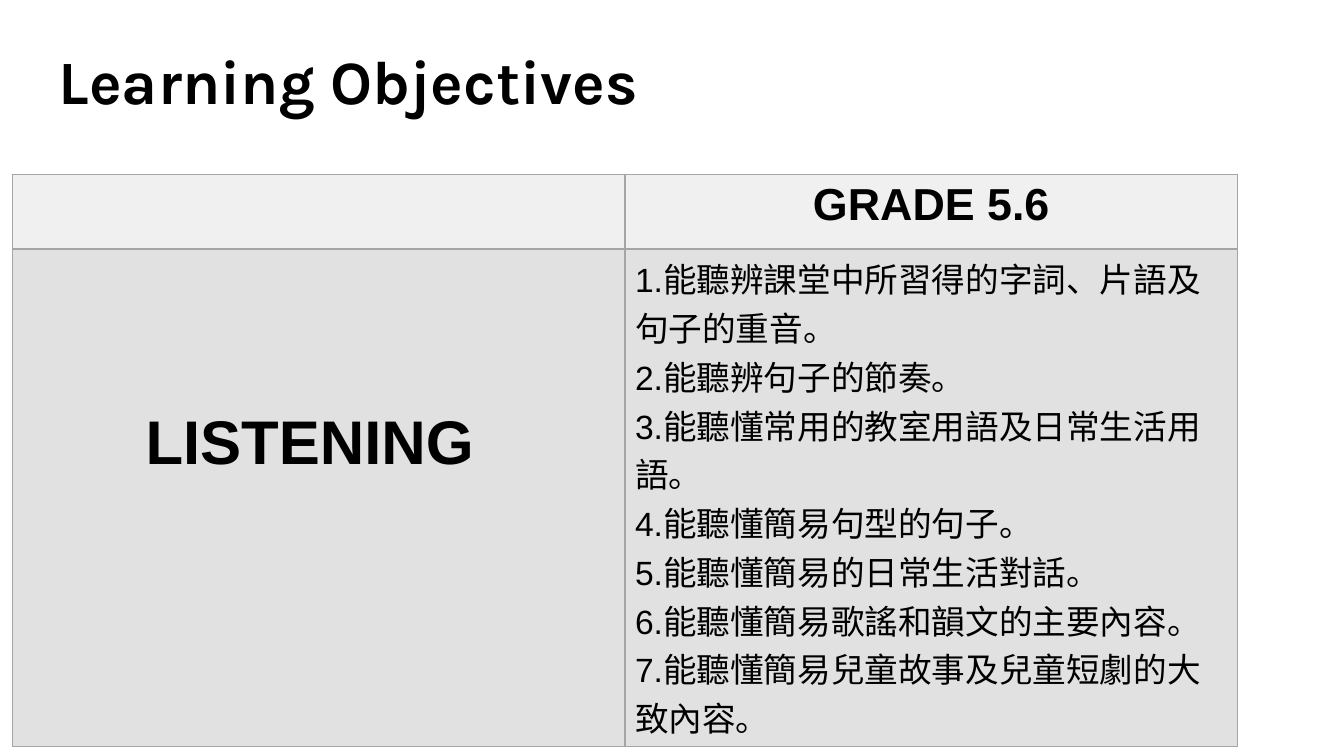
from itertools import product

from lxml.etree import SubElement
from pptx import Presentation
from pptx.dml.color import RGBColor
from pptx.enum.text import MSO_ANCHOR, PP_ALIGN
from pptx.oxml.ns import qn
from pptx.util import Pt

TITLE = " Learning Objectives"
GRADE = ["GRADE 5.6"]
SKILL = ["LISTENING "]
OBJECTIVES = [
    "1.能聽辨課堂中所習得的字詞、片語及句子的重音。",
    "2.能聽辨句子的節奏。",
    "3.能聽懂常用的教室用語及日常生活用語。",
    "4.能聽懂簡易句型的句子。",
    "5.能聽懂簡易的日常生活對話。",
    "6.能聽懂簡易歌謠和韻文的主要內容。",
    "7.能聽懂簡易兒童故事及兒童短劇的大致內容。",
]

BLACK = RGBColor(0x00, 0x00, 0x00)
HEADER_GREY = RGBColor(0xF0, 0xF0, 0xF0)
BODY_GREY = RGBColor(0xE1, 0xE1, 0xE1)
BORDER_GREY = RGBColor(0xA5, 0xA5, 0xA5)

TITLE_FONT = {"name": "Karla", "size": Pt(44), "bold": True}
GRADE_FONT = {"name": "Arial", "size": Pt(32), "bold": True}
SKILL_FONT = {"name": "Arial", "size": Pt(44), "bold": True}
OBJECTIVE_FONT = {"name": "Arial", "size": Pt(24), "bold": False}

COLUMN_WIDTH = 437.76
ROW_HEIGHTS = [53.28, 327.6]
ROW_FILLS = [HEADER_GREY, BODY_GREY]
SKILL_TOP = 114

# (row, column): lines, font, alignment, top margin
CELL_TEXTS = {
    (0, 1): (GRADE, GRADE_FONT, PP_ALIGN.CENTER, 3.6),
    (1, 0): (SKILL, SKILL_FONT, PP_ALIGN.CENTER, SKILL_TOP),
    (1, 1): (OBJECTIVES, OBJECTIVE_FONT, PP_ALIGN.LEFT, 3.6),
}


def write_lines(frame, lines, font_format, alignment):
    for index, line in enumerate(lines):
        para = frame.paragraphs[0] if index == 0 else frame.add_paragraph()
        para.alignment = alignment
        span = para.add_run()
        span.text = line
        span.font.color.rgb = BLACK
        for name, value in font_format.items():
            setattr(span.font, name, value)


def add_borders(cell):
    """Rule all four sides; must run before the cell gets its fill."""
    properties = cell._tc.get_or_add_tcPr()
    for side in ("a:lnL", "a:lnR", "a:lnT", "a:lnB"):
        line = SubElement(properties, qn(side), w=str(Pt(1)))
        fill = SubElement(line, qn("a:solidFill"))
        SubElement(fill, qn("a:srgbClr"), val=str(BORDER_GREY))


def add_title(page):
    box = page.shapes.title
    box.left, box.top, box.width, box.height = map(Pt, (23.76, 7.92, 828, 104.4))
    box.text_frame.vertical_anchor = MSO_ANCHOR.MIDDLE
    write_lines(box.text_frame, [TITLE], TITLE_FONT, PP_ALIGN.LEFT)
    box.text_frame.paragraphs[0].line_spacing = 0.9


def add_objectives_table(page):
    table = page.shapes.add_table(
        2, 2, Pt(8.64), Pt(124.56), Pt(2 * COLUMN_WIDTH), Pt(sum(ROW_HEIGHTS))
    ).table
    table.first_row = table.horz_banding = False
    for column in table.columns:
        column.width = Pt(COLUMN_WIDTH)
    for row, height in zip(table.rows, ROW_HEIGHTS):
        row.height = Pt(height)
    for row, column in product(range(2), repeat=2):
        cell = table.cell(row, column)
        add_borders(cell)
        cell.fill.solid()
        cell.fill.fore_color.rgb = ROW_FILLS[row]
        if (row, column) in CELL_TEXTS:
            lines, font_format, alignment, top = CELL_TEXTS[row, column]
            cell.margin_top = Pt(top)
            write_lines(cell.text_frame, lines, font_format, alignment)


def main():
    deck = Presentation()
    deck.slide_width, deck.slide_height = Pt(960), Pt(540)
    page = deck.slides.add_slide(deck.slide_layouts.get_by_name("Title Only"))
    add_title(page)
    add_objectives_table(page)
    deck.save("out.pptx")


if __name__ == "__main__":
    main()
